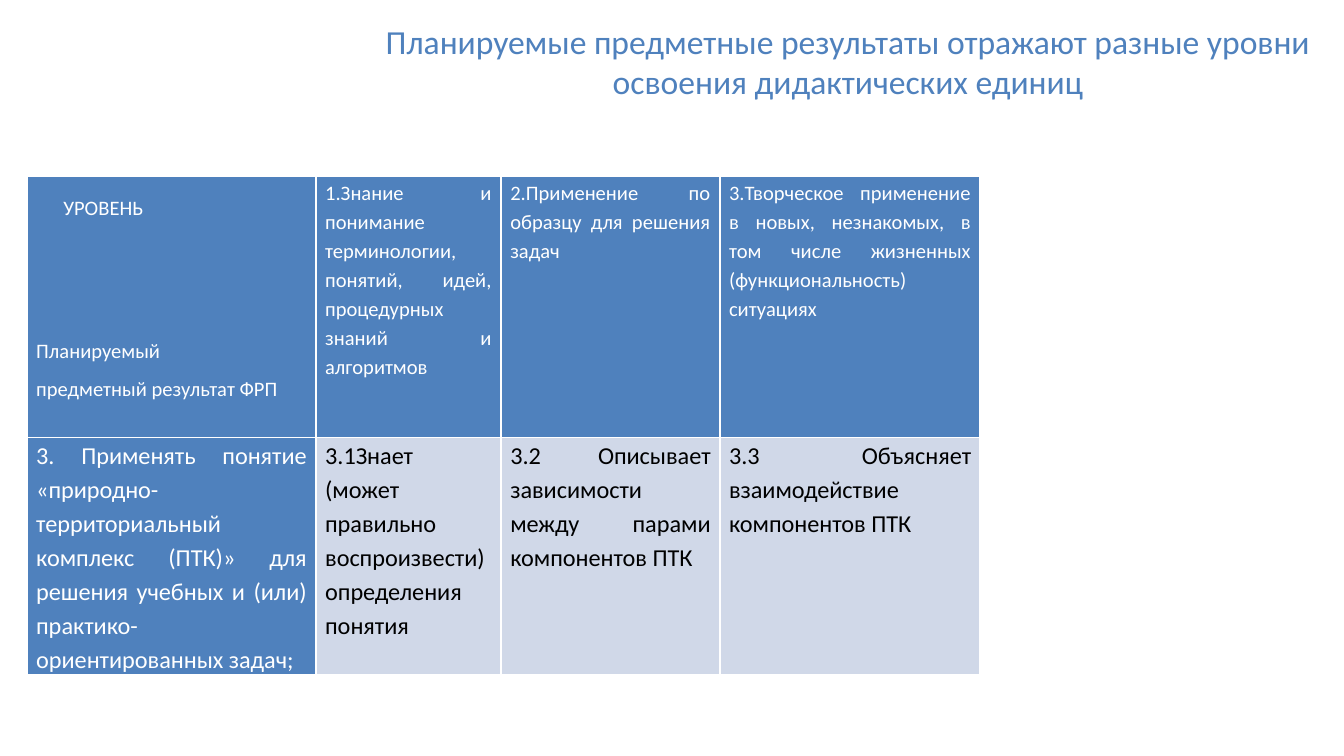
from dataclasses import dataclass

import lxml.etree
import pptx
import pptx.dml.color
import pptx.enum.text
import pptx.oxml.ns
import pptx.util

Pt = pptx.util.Pt
Align = pptx.enum.text.PP_ALIGN


@dataclass(frozen=True)
class Theme:
    font: str = "Calibri"
    blue: str = "4F81BD"
    pale: str = "D0D8E8"
    white: str = "FFFFFF"
    black: str = "000000"
    title_size: float = 18
    header_size: float = 11
    body_size: float = 13
    border_width: float = 1


@dataclass(frozen=True)
class Line:
    text: str
    spacing: float = 1.15
    before: float = 0
    indent: float = 0


@dataclass(frozen=True)
class TableCell:
    lines: tuple[Line, ...]
    size: float
    color: str
    fill: str


THEME = Theme()
COLUMN_WIDTHS = (154.8, 99.2, 117.2, 139.6)
ROW_HEIGHTS = (139.7, 127.4)


def rgb(color: str) -> pptx.dml.color.RGBColor:
    return pptx.dml.color.RGBColor.from_string(color)


def write_text(paragraph, text: str, *, size: float, color: str, align,
               spacing: float = 1, before: float = 0, indent: float = 0) -> None:
    if indent:
        paragraph._p.get_or_add_pPr().set("marL", str(Pt(indent)))
    paragraph.alignment = align
    paragraph.line_spacing = spacing
    paragraph.space_before = Pt(before)
    run = paragraph.add_run()
    run.text = text
    run.font.name = THEME.font
    run.font.size = Pt(size)
    run.font.bold = False
    run.font.color.rgb = rgb(color)


def add_borders(cell) -> None:
    qn = pptx.oxml.ns.qn
    properties = cell._tc.get_or_add_tcPr()
    for side in ("lnL", "lnR", "lnT", "lnB"):
        border = lxml.etree.SubElement(properties, qn(f"a:{side}"),
                                       w=str(Pt(THEME.border_width)))
        fill = lxml.etree.SubElement(border, qn("a:solidFill"))
        lxml.etree.SubElement(fill, qn("a:srgbClr"), val=THEME.white)


def fill_cell(cell, content: TableCell) -> None:
    add_borders(cell)
    cell.fill.solid()
    cell.fill.fore_color.rgb = rgb(content.fill)
    cell.margin_left = cell.margin_right = Pt(5)
    cell.margin_top = cell.margin_bottom = 0
    frame = cell.text_frame
    for index, line in enumerate(content.lines):
        paragraph = frame.add_paragraph() if index else frame.paragraphs[0]
        write_text(paragraph, line.text, size=content.size, color=content.color,
                   align=Align.JUSTIFY, spacing=line.spacing,
                   before=line.before, indent=line.indent)


def header(*lines: Line) -> TableCell:
    return TableCell(lines, THEME.header_size, THEME.white, THEME.blue)


def body(text: str, color: str = THEME.black, fill: str = THEME.pale) -> TableCell:
    return TableCell((Line(text),), THEME.body_size, color, fill)


ROWS = (
    (
        header(Line("УРОВЕНЬ", spacing=1.77, indent=14.5),
               Line("Планируемый", before=61),
               Line("предметный результат ФРП", spacing=1.5)),
        header(Line("1.Знание и понимание терминологии, понятий, идей, "
                    "процедурных знаний и алгоритмов")),
        header(Line("2.Применение по образцу для решения задач")),
        header(Line("3.Творческое применение в новых, незнакомых, в том числе "
                    "жизненных (функциональность) ситуациях")),
    ),
    (
        body("3. Применять понятие «природно-территориальный комплекс (ПТК)» для "
             "решения учебных и (или) практико-ориентированных задач;",
             THEME.white, THEME.blue),
        body("3.1Знает (может правильно воспроизвести) определения понятия"),
        body("3.2 Описывает зависимости между парами компонентов ПТК"),
        body("3.3 Объясняет взаимодействие компонентов ПТК"),
    ),
)


def add_title(slide, text: str) -> None:
    shape = slide.shapes.add_textbox(Pt(195.8), Pt(10), Pt(517), Pt(45.4))
    frame = shape.text_frame
    frame.word_wrap = True
    frame.vertical_anchor = pptx.enum.text.MSO_ANCHOR.MIDDLE
    write_text(frame.paragraphs[0], text, size=THEME.title_size,
               color=THEME.blue, align=Align.CENTER)


def add_level_table(slide) -> None:
    shape = slide.shapes.add_table(len(ROW_HEIGHTS), len(COLUMN_WIDTHS),
                                   Pt(14.4), Pt(94.6),
                                   Pt(sum(COLUMN_WIDTHS)), Pt(sum(ROW_HEIGHTS)))
    table = shape.table
    table.horz_banding = False
    for column, width in zip(table.columns, COLUMN_WIDTHS):
        column.width = Pt(width)
    for row, height, contents in zip(table.rows, ROW_HEIGHTS, ROWS):
        row.height = Pt(height)
        for cell, content in zip(row.cells, contents):
            fill_cell(cell, content)


def main() -> None:
    presentation = pptx.Presentation()
    presentation.slide_width, presentation.slide_height = Pt(720), Pt(405)
    slide = presentation.slides.add_slide(presentation.slide_layouts[6])

    # Heading
    add_title(slide, "Планируемые предметные результаты отражают разные уровни "
                     "освоения дидактических единиц")

    # Levels of mastery for one planned result
    add_level_table(slide)

    presentation.save("out.pptx")


if __name__ == "__main__":
    main()
